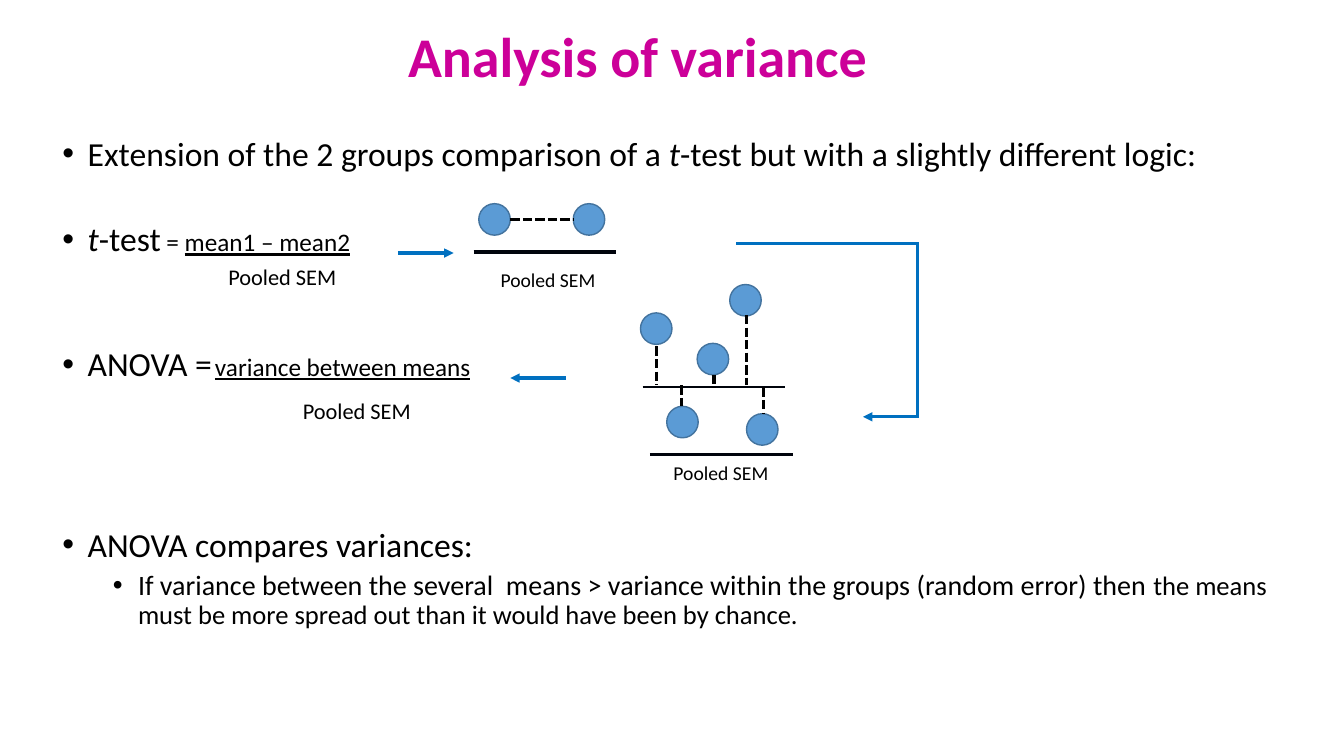
"""Build the analysis of variance slide."""
from dataclasses import dataclass, field
from typing import Any, NamedTuple

from lxml.etree import SubElement as sub
from pptx import Presentation
from pptx.dml.color import RGBColor as RGB
from pptx.enum.dml import MSO_LINE as Dash
from pptx.enum.shapes import MSO_CONNECTOR as Link, MSO_SHAPE as Form
from pptx.enum.text import MSO_ANCHOR as Anchor, MSO_AUTO_SIZE as Auto, PP_ALIGN as Align
from pptx.oxml.ns import qn
from pptx.util import Emu, Pt

SCALE = 9525
DISC = 30


def px(n: int) -> Emu:
    """Turn pixels into EMU."""
    return Emu(n * SCALE)


@dataclass(frozen=True)
class Theme:
    """Hold the colours, font and type sizes."""
    ink: RGB = RGB(0x00, 0x00, 0x00)
    bar: RGB = RGB(0x00, 0x04, 0x0C)
    title: RGB = RGB(0xCC, 0x00, 0x99)
    arrow: RGB = RGB(0x00, 0x70, 0xC0)
    disc: RGB = RGB(0x5B, 0x9B, 0xD5)
    edge: RGB = RGB(0x43, 0x73, 0x9E)
    font: str = "Calibri"
    head: int = 40
    lead: int = 24
    point: int = 20
    close: int = 19
    term: int = 18
    under: int = 16
    label: int = 14
    gap: int = 10
    thin: float = 1.5
    thick: float = 2.25


T = Theme()


class Box(NamedTuple):
    """Give a frame in pixels."""
    left: int
    top: int
    width: int
    height: int


class Run(NamedTuple):
    """Give a piece of text and its format."""
    text: str
    size: int
    style: dict[str, Any] = {}


@dataclass
class Para:
    """Describe a paragraph and its indent in pixels."""
    runs: list[Run]
    before: float = 0
    left: int = 24
    hang: int = 24
    level: int = 0
    align: Align = Align.LEFT
    spacing: float = 0.9


@dataclass
class Line:
    """Describe a straight line and its look."""
    start: tuple[int, int]
    end: tuple[int, int]
    color: RGB = field(default=T.bar)
    width: float = T.thick
    dash: bool = False
    tip: bool = False


def apply(item: Any, form: dict[str, Any]) -> None:
    """Set each attribute in the dict."""
    for name, value in form.items():
        setattr(item, name, value)


def place(shape: Any, box: Box) -> None:
    """Move and size a shape."""
    apply(shape, {name: px(n) for name, n in box._asdict().items()})


def write(frame: Any, paras: list[Para], color: RGB = T.ink) -> None:
    """Fill a text frame with paragraphs."""
    for i, para in enumerate(paras):
        p = frame.add_paragraph() if i else frame.paragraphs[0]
        apply(p, {"level": para.level, "alignment": para.align,
                  "line_spacing": para.spacing, "space_before": Pt(para.before)})
        props = p._p.get_or_add_pPr()
        props.set("marL", str(px(para.left)))
        props.set("indent", str(-px(para.hang)))
        if para.hang:
            sub(props, qn("a:buFont"), typeface="Arial")
            sub(props, qn("a:buChar"), char="•")
        else:
            sub(props, qn("a:buNone"))
        for run in para.runs:
            r = p.add_run()
            r.text = run.text
            apply(r.font, {"name": T.font, "size": Pt(run.size), **run.style})
            r.font.color.rgb = color


def text(shapes: Any, box: Box, paras: list[Para], wrap: bool) -> None:
    """Add a text box."""
    shape = shapes.add_textbox(*map(px, box))
    shape.text_frame.word_wrap = wrap
    write(shape.text_frame, paras)


def disc(shapes: Any, left: int, top: int) -> None:
    """Add a disc for one group mean."""
    shape = shapes.add_shape(Form.OVAL, px(left), px(top), px(DISC), px(DISC))
    shape.shadow.inherit = False
    shape.fill.solid()
    shape.fill.fore_color.rgb = T.disc
    shape.line.color.rgb = T.edge
    shape.line.width = Pt(1)


def draw(shapes: Any, line: Line) -> None:
    """Add a straight connector."""
    link = shapes.add_connector(Link.STRAIGHT, *map(px, line.start + line.end))
    link.line.color.rgb = line.color
    link.line.width = Pt(line.width)
    if line.dash:
        link.line.dash_style = Dash.SQUARE_DOT
    if line.tip:
        sub(link.line._get_or_add_ln(), qn("a:tailEnd"), type="triangle")
    sub(link._element.spPr, qn("a:effectLst"))


ITALIC = {"italic": True}
LINED = {"underline": True}
POOLED = "Pooled SEM"

BODY = [
    Para([Run("Extension of the 2 groups comparison of a ", T.lead), Run("t", T.lead, ITALIC),
          Run("-test but with a slightly different logic:", T.lead)], T.gap),
    Para([Run("t", T.lead, ITALIC), Run("-test", T.lead), Run(" = ", T.term),
          Run("mean1 – mean2", T.term, LINED)], 35),
    Para([Run(POOLED, T.under)], 5, left=158, hang=0),
    Para([Run("ANOVA =", T.lead), Run(" ", T.gap),
          Run("variance between means", T.term, LINED)], 41),
    Para([Run(POOLED, T.under)], 12, left=229, hang=0),
    Para([Run("ANOVA compares variances:", T.lead)], 74),
    Para([Run("If variance between the several  means > variance within the groups "
              "(random error) then ", T.point),
          Run("the means must be more spread out than it would have been by chance.",
              T.close)], 5, left=72, level=1),
]
LABELS = [(Box(467, 250, 110, 33), Align.CENTER), (Box(632, 434, 110, 33), Align.LEFT)]
DISCS = [(456, 194), (546, 194),
         (610, 298), (664, 327), (695, 271), (635, 387), (711, 394)]
DROPS = [(625, 330, 367), (680, 357, 369), (727, 369, 394), (711, 300, 367), (649, 367, 387)]
LINES = [
    Line((486, 209), (546, 209), T.ink, dash=True),
    Line((451, 240), (587, 240)),
    Line((619, 433), (755, 433)),
    Line((612, 369), (748, 369), width=T.thin),
    *(Line((x, top), (x, low), T.ink, dash=True) for x, top, low in DROPS),
    Line((379, 241), (432, 241), T.arrow, tip=True),
    Line((701, 232), (875, 232), T.arrow),
    Line((874, 231), (874, 398), T.arrow),
    Line((875, 397), (822, 397), T.arrow, tip=True),
    Line((539, 360), (486, 360), T.arrow, tip=True),
]


def main() -> None:
    """Build and save the slide."""
    deck = Presentation()
    apply(deck, {"slide_width": px(1280), "slide_height": px(720)})
    slide = deck.slides.add_slide(deck.slide_layouts[5])
    shapes = slide.shapes
    title = shapes.title
    place(title, Box(379, 20, 521, 73))
    apply(title.text_frame, {"vertical_anchor": Anchor.MIDDLE, "auto_size": Auto.NONE,
                             "word_wrap": True})
    write(title.text_frame, [Para([Run("Analysis of variance", T.head, {"bold": True})],
                                  left=0, hang=0)], T.title)
    text(shapes, Box(50, 126, 1194, 521), BODY, True)
    for spot in DISCS:
        disc(shapes, *spot)
    for line in LINES:
        draw(shapes, line)
    for box, align in LABELS:
        text(shapes, box, [Para([Run(POOLED, T.label)], left=0, hang=0, align=align,
                                spacing=1.0)], False)
    deck.save("out.pptx")


if __name__ == "__main__":
    main()
